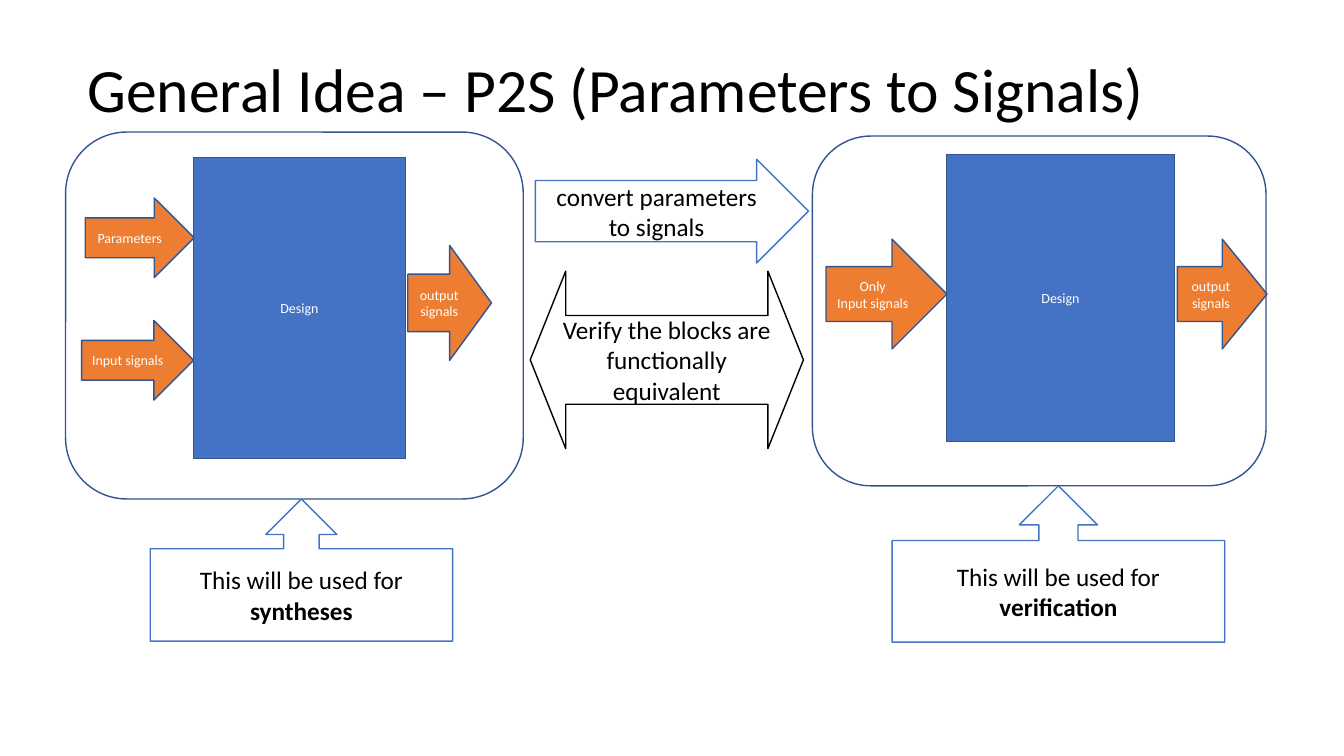
from dataclasses import dataclass
from typing import Optional

from pptx import Presentation
from pptx.dml.color import RGBColor
from pptx.enum.shapes import MSO_SHAPE
from pptx.enum.text import MSO_ANCHOR, PP_ALIGN
from pptx.shapes.autoshape import Shape
from pptx.util import Inches, Pt

RECTANGLE = MSO_SHAPE.RECTANGLE
ROUNDED = MSO_SHAPE.ROUNDED_RECTANGLE
RIGHT_ARROW = MSO_SHAPE.RIGHT_ARROW
TWO_WAY_ARROW = MSO_SHAPE.LEFT_RIGHT_ARROW
UP_CALLOUT = MSO_SHAPE.UP_ARROW_CALLOUT
MIDDLE = MSO_ANCHOR.MIDDLE
CENTER = PP_ALIGN.CENTER

BLACK = RGBColor(0x00, 0x00, 0x00)
WHITE = RGBColor(0xFF, 0xFF, 0xFF)
BLUE = RGBColor(0x44, 0x72, 0xC4)
DARK_BLUE = RGBColor(0x32, 0x54, 0x91)
ORANGE = RGBColor(0xED, 0x7D, 0x31)

FONT = "Calibri"
SLIDE_WIDTH = Inches(13.33)
SLIDE_HEIGHT = Inches(7.5)
COLUMN = SLIDE_WIDTH / 100
ROW = SLIDE_HEIGHT / 100


@dataclass(frozen=True)
class Area:
    column: float
    row: float
    columns: float
    rows: float

    def lengths(self) -> tuple[int, int, int, int]:
        return (round(self.column * COLUMN), round(self.row * ROW),
                round(self.columns * COLUMN), round(self.rows * ROW))


@dataclass(frozen=True)
class Style:
    fill: Optional[RGBColor]
    line: RGBColor
    text_color: RGBColor
    size: int
    side_margin: float = 0.1
    edge_margin: float = 0.05


@dataclass(frozen=True)
class Block:
    kind: MSO_SHAPE
    style: Style
    area: Area
    text: str = ""
    bold_ending: str = ""
    adjustments: tuple[float, ...] = ()


DESIGN = Style(BLUE, DARK_BLUE, WHITE, 10)
SIGNAL = Style(ORANGE, DARK_BLUE, WHITE, 10, 0.05, 0.1)
FRAME = Style(None, DARK_BLUE, BLACK, 10)
NOTE = Style(WHITE, BLUE, BLACK, 18)
CHECK = Style(WHITE, BLACK, BLACK, 18)

TITLE = "General Idea – P2S (Parameters to Signals)"
TITLE_AREA = Area(5.78, 2.53, 88.73, 19.33)

SYNTHESIS_GROUP = (
    Block(RECTANGLE, DESIGN, Area(14.4, 20.8, 15.75, 39.87), "Design"),
    Block(RIGHT_ARROW, SIGNAL, Area(6.08, 42.4, 8.33, 10.53), "Input signals"),
    Block(RIGHT_ARROW, SIGNAL, Area(6.34, 26.2, 8.1, 10.53), "Parameters"),
    Block(RIGHT_ARROW, SIGNAL, Area(30.34, 32.47, 6.23, 15.2), "output signals"),
    Block(ROUNDED, FRAME, Area(4.88, 17.47, 34.05, 48.53)),
)
VERIFICATION_GROUP = (
    Block(RECTANGLE, DESIGN, Area(70.43, 20.4, 16.95, 38), "Design"),
    Block(RIGHT_ARROW, SIGNAL, Area(61.46, 31.63, 9, 14.53), "Only\nInput signals"),
    Block(RIGHT_ARROW, SIGNAL, Area(87.6, 31.63, 6.68, 14.53), "output signals"),
    Block(ROUNDED, FRAME, Area(60.45, 18, 33.75, 46.27)),
)
NOTES = (
    Block(RIGHT_ARROW, NOTE, Area(39.83, 21.07, 20.33, 13.73),
          "convert parameters\vto signals", adjustments=(0.59, 0.5)),
    Block(UP_CALLOUT, NOTE, Area(11.18, 66, 22.5, 18.8),
          "This will be used for ", "syntheses"),
    Block(UP_CALLOUT, NOTE, Area(66.38, 64.27, 24.75, 20.67),
          "This will be used for ", "verification"),
    Block(TWO_WAY_ARROW, CHECK, Area(39.45, 35.87, 20.33, 23.47),
          "Verify the blocks are functionally equivalent", adjustments=(0.5, 0.2)),
)


def write_text(shape: Shape, block: Block) -> None:
    style = block.style
    frame = shape.text_frame
    frame.word_wrap = True
    frame.vertical_anchor = MIDDLE
    frame.margin_left = frame.margin_right = Inches(style.side_margin)
    frame.margin_top = frame.margin_bottom = Inches(style.edge_margin)
    frame.text = block.text
    if block.bold_ending:
        ending = frame.paragraphs[-1].add_run()
        ending.text = block.bold_ending
        ending.font.bold = True
    for paragraph in frame.paragraphs:
        paragraph.alignment = CENTER
        for run in paragraph.runs:
            run.font.name = FONT
            run.font.size = Pt(style.size)
            run.font.color.rgb = style.text_color


def draw_block(shapes, block: Block) -> None:
    shape = shapes.add_shape(block.kind, *block.area.lengths())
    shape.shadow.inherit = False
    for index, value in enumerate(block.adjustments):
        shape.adjustments[index] = value
    if block.style.fill is None:
        shape.fill.background()
    else:
        shape.fill.solid()
        shape.fill.fore_color.rgb = block.style.fill
    shape.line.color.rgb = block.style.line
    shape.line.width = Pt(1)
    if block.text:
        write_text(shape, block)


def draw_title(shapes) -> None:
    title = shapes.add_textbox(*TITLE_AREA.lengths())
    frame = title.text_frame
    frame.word_wrap = True
    frame.vertical_anchor = MIDDLE
    frame.text = TITLE
    paragraph = frame.paragraphs[0]
    paragraph.line_spacing = 0.9
    font = paragraph.runs[0].font
    font.name = FONT
    font.size = Pt(44)
    font.color.rgb = BLACK


def main() -> None:
    presentation = Presentation()
    presentation.slide_width = SLIDE_WIDTH
    presentation.slide_height = SLIDE_HEIGHT
    slide = presentation.slides.add_slide(presentation.slide_layouts[6])
    draw_title(slide.shapes)
    for blocks in (SYNTHESIS_GROUP, VERIFICATION_GROUP):
        group = slide.shapes.add_group_shape()
        for block in blocks:
            draw_block(group.shapes, block)
    for block in NOTES:
        draw_block(slide.shapes, block)
    presentation.save("out.pptx")


if __name__ == "__main__":
    main()
